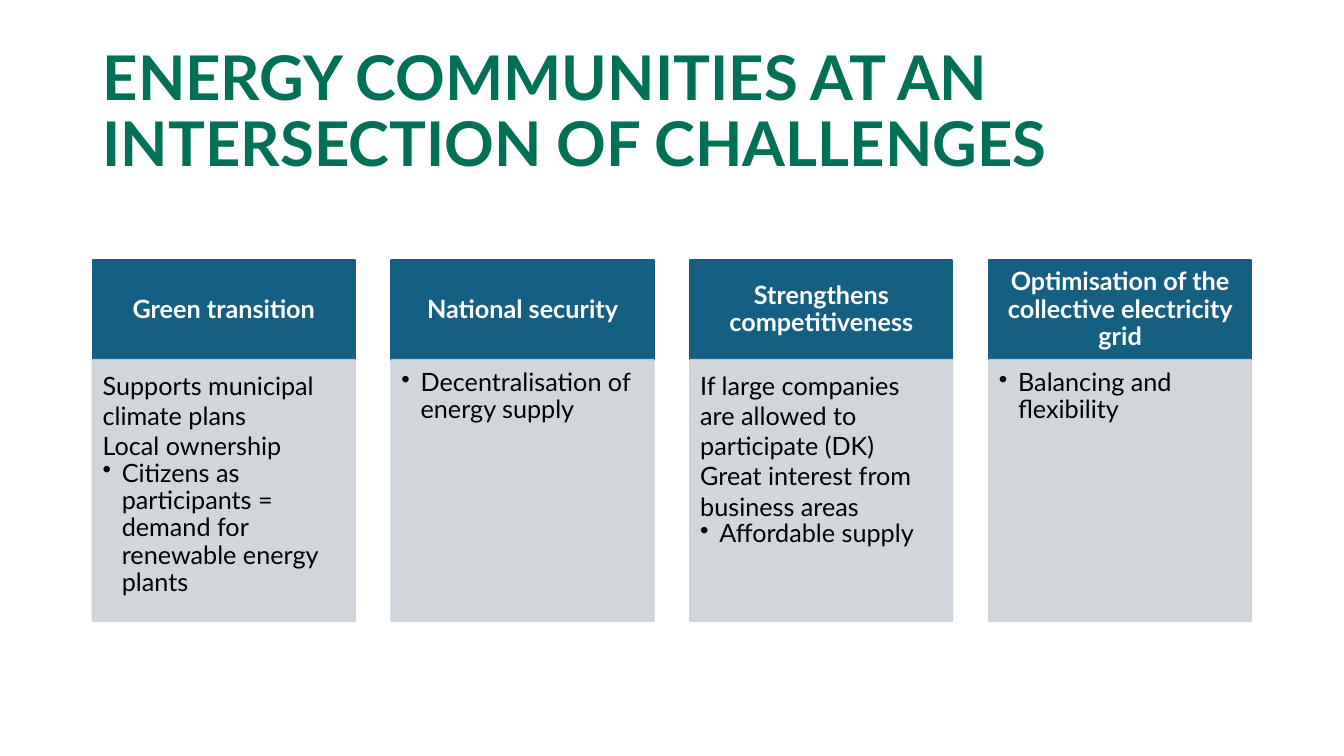
from lxml import etree
from pptx import Presentation, util as u
from pptx.dml import color
from pptx.enum import shapes, text
from pptx.oxml import ns

TITLE = "ENERGY COMMUNITIES AT AN\nINTERSECTION OF CHALLENGES"
CHALLENGES = [
    ("Green transition",
     ["Supports municipal climate plans", "Local ownership"],
     "Citizens as participants = demand for renewable energy plants"),
    ("National security", [], "Decentralisation of energy supply"),
    ("Strengthens competitiveness",
     ["If large companies are allowed to participate (DK)",
      "Great interest from business areas"],
     "Affordable supply"),
    ("Optimisation of the collective electricity grid", [],
     "Balancing and flexibility"),
]
GREEN, BLUE, GREY, WHITE, BLACK = "007056", "156082", "CCD2D8", "FFFFFF", "000000"
LEFT, RIGHT, COLUMN_WIDTH = 0.92, 12.41, 2.6
HEADER_TOP, HEADER_HEIGHT, BODY_HEIGHT = 2.58, 0.99, 2.59
INDENT = 0.19


def rgb(value):
    return color.RGBColor.from_string(value)


def add_rectangle(left, top, height, fill, opacity=100):
    box = slide.shapes.add_shape(
        shapes.MSO_SHAPE.RECTANGLE, u.Inches(left), u.Inches(top),
        u.Inches(COLUMN_WIDTH), u.Inches(height))
    box.shadow.inherit = False
    box.fill.solid()
    box.fill.fore_color.rgb = rgb(fill)
    box.line.color.rgb = rgb(fill)
    box.line.width = u.Pt(1.5)
    if opacity < 100:
        for tone in box._element.spPr.iter(ns.qn("a:srgbClr")):
            etree.SubElement(tone, ns.qn("a:alpha"), val=str(opacity * 1000))
    return box


def set_frame(box, insets, anchor):
    frame = box.text_frame
    frame.word_wrap = True
    frame.vertical_anchor = anchor
    (frame.margin_left, frame.margin_top,
     frame.margin_right, frame.margin_bottom) = map(u.Inches, insets)
    return frame


def write(frame, words, size=18, ink=BLACK, bold=False,
          align=text.PP_ALIGN.LEFT, spacing=0.9, bullet=False):
    para = frame.paragraphs[0]
    if para.runs:
        para = frame.add_paragraph()
    para.text = words
    para.alignment = align
    para.line_spacing = spacing
    if bullet:
        properties = para._p.get_or_add_pPr()
        properties.set("marL", str(u.Inches(INDENT)))
        properties.set("indent", str(-u.Inches(INDENT)))
        etree.SubElement(properties, ns.qn("a:buChar"), char="•")
    for span in para.runs:
        span.font.name = "Lato"
        span.font.size = u.Pt(size)
        span.font.bold = bold
        span.font.color.rgb = rgb(ink)


deck = Presentation()
deck.slide_width, deck.slide_height = u.Inches(13.33), u.Inches(7.5)
slide = deck.slides.add_slide(deck.slide_layouts[6])

title = slide.shapes.add_textbox(
    u.Inches(LEFT), u.Inches(0.4), u.Inches(11.5), u.Inches(1.45))
write(set_frame(title, (0.1, 0.05, 0.1, 0.05), text.MSO_ANCHOR.MIDDLE),
      TITLE, size=44, ink=GREEN, bold=True)

pitch = (RIGHT - LEFT - COLUMN_WIDTH) / (len(CHALLENGES) - 1)
for column, (heading, statements, point) in enumerate(CHALLENGES):
    left = LEFT + column * pitch
    header = add_rectangle(left, HEADER_TOP, HEADER_HEIGHT, BLUE)
    write(set_frame(header, (0.14, 0.08, 0.14, 0.08), text.MSO_ANCHOR.MIDDLE),
          heading, ink=WHITE, bold=True, align=text.PP_ALIGN.CENTER)
    body = add_rectangle(left, HEADER_TOP + HEADER_HEIGHT, BODY_HEIGHT, GREY, opacity=90)
    frame = set_frame(body, (0.1, 0.1, 0.14, 0.16), text.MSO_ANCHOR.TOP)
    for statement in statements:
        write(frame, statement, spacing=1.0)
    write(frame, point, bullet=True)

deck.save("out.pptx")
